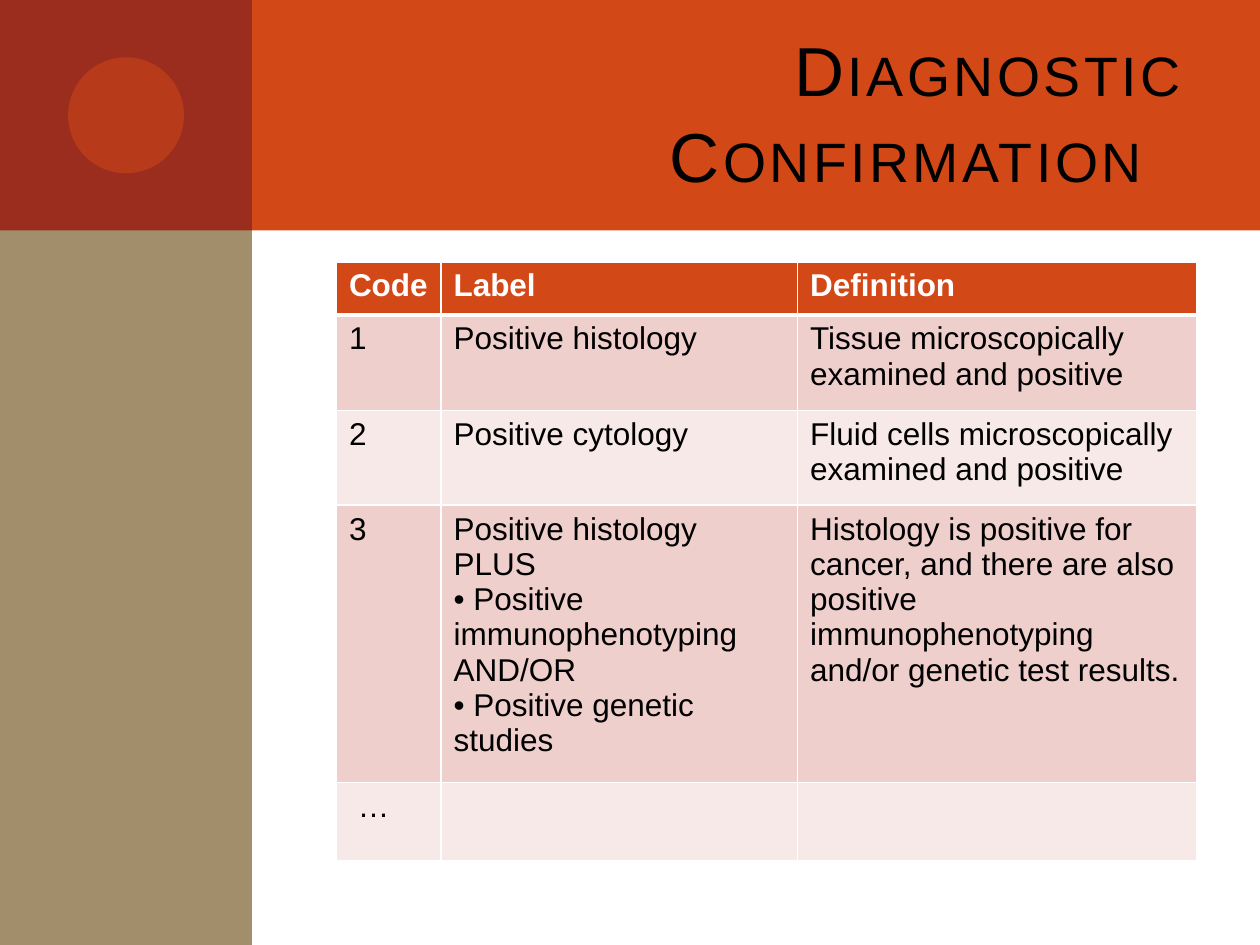
import pptx
import pptx.util
import pptx.dml.color
import pptx.enum.shapes
import pptx.enum.text
import pptx.oxml.ns
import lxml.etree

Inches = pptx.util.Inches
Pt = pptx.util.Pt
KIND = pptx.enum.shapes.MSO_SHAPE

HUES = {
    "flame": "D34817",
    "brick": "9B2D1F",
    "sand": "A28E6A",
    "rose": "EFCFCC",
    "blush": "F7E9E8",
    "black": "000000",
    "white": "FFFFFF",
}
FONT = "Arial"
COLS = [0.83, 2.83, 3.17]
ROWS = [0.42, 0.76, 0.75, 2.2, 0.62]
HEAD = ["Code", "Label", "Definition"]
BODY = [
    ["1", "Positive histology", "Tissue microscopically examined and positive"],
    ["2", "Positive cytology", "Fluid cells microscopically examined and positive"],
    [
        "3",
        "Positive histology PLUS\n• Positive immunophenotyping\nAND/OR\n• Positive genetic studies",
        "Histology is positive for cancer, and there are also positive\n"
        "immunophenotyping and/or genetic test results.",
    ],
    [" …", "", ""],
]


def color(name):
    return pptx.dml.color.RGBColor.from_string(HUES[name])


def child(node, tag, **attrs):
    return lxml.etree.SubElement(node, pptx.oxml.ns.qn(tag), **attrs)


def add_run(para, text, size, hue, bold=False):
    run = para.add_run()
    run.text = text
    font = run.font
    font.name, font.size, font.bold = FONT, Pt(size), bold
    font.color.rgb = color(hue)
    return run


def add_block(slide, kind, box, hue):
    shape = slide.shapes.add_shape(kind, *map(Inches, box))
    shape.shadow.inherit = False
    shape.fill.solid()
    shape.fill.fore_color.rgb = color(hue)
    shape.line.fill.background()
    return shape


def add_frame(slide, box):
    left, top, wide, high = box
    side, band, dot = 2, 1.83, 0.92
    add_block(slide, KIND.RECTANGLE, (left + 0.5, top, wide - 0.5, band), "flame")
    add_block(slide, KIND.RECTANGLE, (left, top, side, high), "sand")
    add_block(slide, KIND.RECTANGLE, (left, top, side, band), "brick")
    spot = (left + (side - dot) / 2, top + (band - dot) / 2, dot, dot)
    disc = add_block(slide, KIND.OVAL, spot, "flame")
    tint = disc.fill._xPr.find(".//" + pptx.oxml.ns.qn("a:srgbClr"))
    child(tint, "a:alpha", val="50000")


def add_title(slide, box, text):
    frame = slide.shapes.add_textbox(*map(Inches, box)).text_frame
    frame.word_wrap = True
    frame.vertical_anchor = pptx.enum.text.MSO_ANCHOR.MIDDLE
    para = frame.paragraphs[0]
    para.alignment = pptx.enum.text.PP_ALIGN.RIGHT
    para.line_spacing = 1.04
    props = add_run(para, text, 39.6, "black").font._element
    props.set("cap", "small")
    props.set("spc", "200")


def add_edges(cell, base):
    props = cell._tc.get_or_add_tcPr()
    for side, width in zip("LRTB", (1, 1, 1, base)):
        line = child(props, "a:ln" + side, w=str(Pt(width)))
        child(child(line, "a:solidFill"), "a:srgbClr", val=HUES["white"])


def fill_cell(cell, text, top, hue):
    add_edges(cell, 3 if top else 1)
    cell.fill.solid()
    cell.fill.fore_color.rgb = color(hue)
    frame = cell.text_frame
    for i, line in enumerate(text.split("\n")):
        para = frame.add_paragraph() if i else frame.paragraphs[0]
        if line:
            add_run(para, line, 18, "white" if top else "black", top)


def add_grid(slide, box):
    data = [HEAD] + BODY
    table = slide.shapes.add_table(len(ROWS), len(COLS), *map(Inches, box)).table
    for col, wide in zip(table.columns, COLS):
        col.width = Inches(wide)
    for i, (row, high) in enumerate(zip(table.rows, ROWS)):
        row.height = Inches(high)
        hue = "flame" if i == 0 else ("blush", "rose")[i % 2]
        for cell, text in zip(row.cells, data[i]):
            fill_cell(cell, text, i == 0, hue)


def main():
    deck = pptx.Presentation()
    deck.slide_width, deck.slide_height = Inches(10), Inches(7.5)
    slide = deck.slides.add_slide(deck.slide_layouts[6])
    add_frame(slide, (0, 0, 10, 7.5))
    add_title(slide, (2.67, 0.25, 6.83, 1.25), "Diagnostic Confirmation")
    add_grid(slide, (2.67, 2.08, sum(COLS), sum(ROWS)))
    deck.save("out.pptx")


if __name__ == "__main__":
    main()
